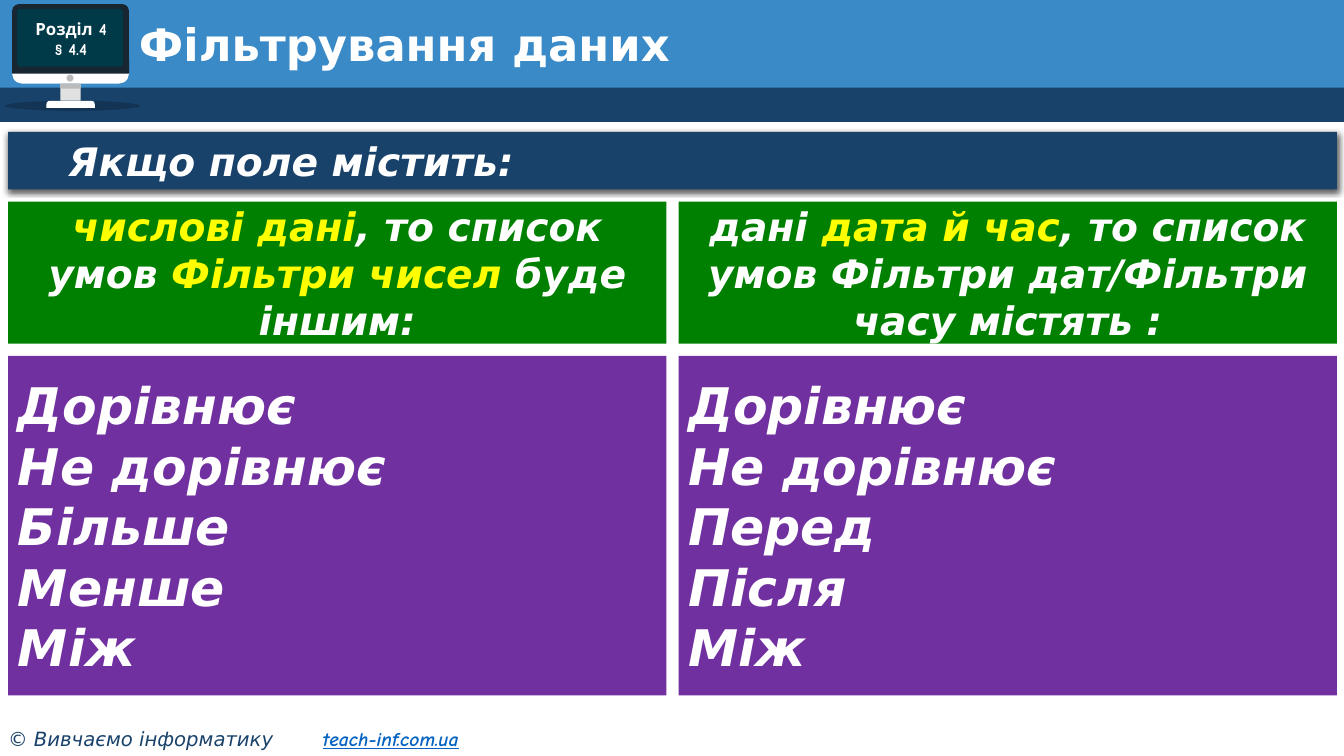
from dataclasses import dataclass
from lxml.etree import SubElement
from pptx import Presentation
from pptx.dml.color import RGBColor
from pptx.enum.shapes import MSO_SHAPE
from pptx.enum.text import MSO_ANCHOR, PP_ALIGN
from pptx.oxml.ns import qn
from pptx.util import Emu, Pt


@dataclass(frozen=True)
class Theme:
    sans: str = "DejaVu Sans"
    comic: str = "Comic Neue"
    white: str = "FFFFFF"
    black: str = "000000"
    sky: str = "398AC7"
    navy: str = "19426B"
    green: str = "008000"
    purple: str = "7030A0"
    yellow: str = "FFFF00"
    link: str = "0563C1"
    bezel: str = "182632"
    screen: str = "003948"
    stand: str = "E1E1E1"
    grey: str = "BBBBBB"
    badge: int = 12
    footer: int = 14
    heading: int = 28
    title: int = 32
    option: int = 36


@dataclass(frozen=True)
class Box:
    x: int
    y: int
    w: int
    h: int


@dataclass(frozen=True)
class Part:
    box: Box
    fill: str
    kind: MSO_SHAPE = MSO_SHAPE.RECTANGLE
    adj: float | None = None
    alpha: int = 100


@dataclass(frozen=True)
class Style:
    size: int
    font: str = "DejaVu Sans"
    color: str = "FFFFFF"
    italic: bool = True
    bold: bool = True
    align: PP_ALIGN = PP_ALIGN.LEFT


@dataclass(frozen=True)
class Span:
    text: str
    color: str


@dataclass(frozen=True)
class Column:
    heading: list[Span]
    options: list[str]


T = Theme()
SCALE = 9144


def px(n: int) -> Emu:
    return Emu(n * SCALE)


def place(box: Box) -> tuple[Emu, Emu, Emu, Emu]:
    return px(box.x), px(box.y), px(box.w), px(box.h)


def draw_part(slide, part: Part):
    s = slide.shapes.add_shape(part.kind, *place(part.box))
    s.shadow.inherit = False
    s.fill.solid()
    s.fill.fore_color.rgb = RGBColor.from_string(part.fill)
    s.line.fill.background()
    if part.adj is not None:
        s.adjustments[0] = part.adj
    if part.alpha < 100:
        clr = s._element.spPr.find(qn("a:solidFill"))[0]
        SubElement(clr, qn("a:alpha"), val=str(part.alpha * 1000))
    return s


def add_text_box(slide, box: Box):
    return slide.shapes.add_textbox(*place(box))


def write(s, paragraphs: list[list[Span]], style: Style, anchor=MSO_ANCHOR.MIDDLE):
    tf = s.text_frame
    tf.word_wrap = True
    tf.vertical_anchor = anchor
    for i, spans in enumerate(paragraphs):
        p = tf.paragraphs[0] if i == 0 else tf.add_paragraph()
        p.alignment = style.align
        p.font.name = style.font
        p.font.size = Pt(style.size)
        p.font.bold = style.bold
        p.font.italic = style.italic
        for span in spans:
            r = p.add_run()
            r.text = span.text
            r.font.color.rgb = RGBColor.from_string(span.color)
    return tf


def lines(texts: list[str], style: Style) -> list[list[Span]]:
    return [[Span(text, style.color)] for text in texts]


def add_drop_shadow(s) -> None:
    effects = s._element.spPr.find(qn("a:effectLst"))
    shadow = SubElement(effects, qn("a:outerShdw"), blurRad=str(Pt(4.5)),
                        dist=str(Pt(1.5)), dir="5400000", rotWithShape="0")
    clr = SubElement(shadow, qn("a:srgbClr"), val=T.black)
    SubElement(clr, qn("a:alpha"), val="63000")


HEADER = [
    Part(Box(0, 0, 1333, 91), T.sky),
    Part(Box(0, 87, 1333, 34), T.navy),
]
MONITOR = [
    Part(Box(5, 100, 134, 10), T.black, MSO_SHAPE.OVAL, alpha=20),
    Part(Box(12, 63, 116, 20), T.white, MSO_SHAPE.ROUNDED_RECTANGLE, 0.5),
    Part(Box(12, 4, 116, 69), T.bezel, MSO_SHAPE.ROUND_2_SAME_RECTANGLE, 0.1),
    Part(Box(60, 83, 20, 17), T.stand),
    Part(Box(60, 83, 20, 5), T.grey),
    Part(Box(46, 100, 48, 7), T.white, MSO_SHAPE.ROUND_2_SAME_RECTANGLE, 0.5),
    Part(Box(66, 74, 7, 7), T.grey, MSO_SHAPE.OVAL),
    Part(Box(17, 9, 105, 57), T.screen, MSO_SHAPE.ROUNDED_RECTANGLE, 0.04),
]
COLUMNS = [
    Column([Span("числові дані", T.yellow), Span(", то список умов ", T.white),
            Span("Фільтри чисел ", T.yellow), Span("буде іншим:", T.white)],
           ["Дорівнює", "Не дорівнює", "Більше", "Менше", "Між"]),
    Column([Span("дані ", T.white), Span("дата й час", T.yellow),
            Span(", то список умов Фільтри дат/Фільтри часу містять :", T.white)],
           ["Дорівнює", "Не дорівнює", "Перед", "Після", "Між"]),
]
LEFT, COLUMN_W, GAP = 8, 653, 12


def draw_footer(slide) -> None:
    s = add_text_box(slide, Box(0, 716, 521, 34))
    s.text_frame.margin_left = px(8)
    p = s.text_frame.paragraphs[0]
    tabs = SubElement(p._p.get_or_add_pPr(), qn("a:tabLst"))
    SubElement(tabs, qn("a:tab"), pos=str(px(312)), algn="l")
    style = Style(T.footer, bold=False)
    write(s, [[Span("© Вивчаємо інформатику\t", T.navy),
               Span("teach-inf.com.ua", T.link)]], style, MSO_ANCHOR.TOP)
    link = p.runs[-1].font
    link.name = T.comic
    link.bold = True
    link.underline = True


def draw_banner(slide) -> None:
    s = draw_part(slide, Part(Box(LEFT, 131, 2 * COLUMN_W + GAP, 57), T.navy))
    add_drop_shadow(s)
    style = Style(T.heading, align=PP_ALIGN.JUSTIFY)
    tf = write(s, lines(["Якщо поле містить:"], style), style, MSO_ANCHOR.TOP)
    tf.paragraphs[0]._p.get_or_add_pPr().set("indent", str(px(50)))


def draw_column(slide, i: int, column: Column) -> None:
    x = LEFT + i * (COLUMN_W + GAP)
    s = draw_part(slide, Part(Box(x, 200, COLUMN_W, 141), T.green))
    write(s, [column.heading], Style(T.heading, align=PP_ALIGN.CENTER))
    s = draw_part(slide, Part(Box(x, 353, COLUMN_W, 337), T.purple))
    style = Style(T.option)
    write(s, lines(column.options, style), style)


def main() -> None:
    prs = Presentation()
    prs.slide_width, prs.slide_height = px(1333), px(750)
    slide = prs.slides.add_slide(prs.slide_layouts[6])
    for part in HEADER + MONITOR:
        draw_part(slide, part)
    draw_footer(slide)
    badge = Style(T.badge, T.comic, italic=False, align=PP_ALIGN.CENTER)
    write(add_text_box(slide, Box(13, 9, 115, 59)), lines(["Розділ 4", "§ 4.4"], badge), badge)
    title = Style(T.title, italic=False)
    tf = write(add_text_box(slide, Box(128, 18, 1172, 58)),
               lines(["Фільтрування даних"], title), title)
    tf.paragraphs[0].line_spacing = 0.9
    draw_banner(slide)
    for i, column in enumerate(COLUMNS):
        draw_column(slide, i, column)
    prs.save("out.pptx")


if __name__ == "__main__":
    main()
